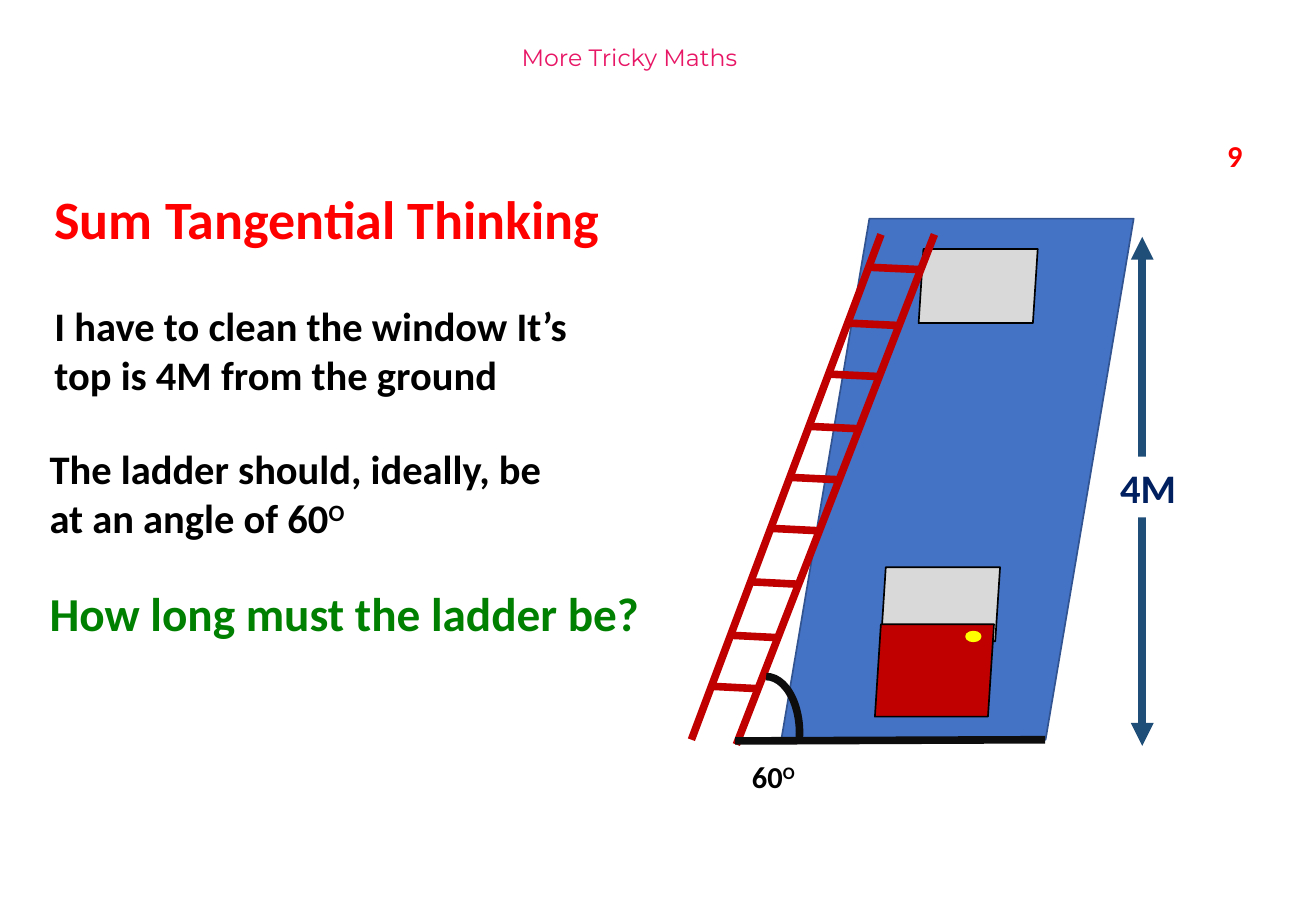
import pptx
import pptx.util
import pptx.dml.color
import pptx.enum.shapes
import pptx.enum.text
import pptx.oxml.ns
import lxml.etree

Inches = pptx.util.Inches
Forms = pptx.enum.shapes.MSO_SHAPE
RED = "C00000"
INK = "0D0D0D"


def paint(color, code):
    color.rgb = pptx.dml.color.RGBColor.from_string(code)


def put(slide, form, box, fill=None, edge=None, weight=1):
    shape = slide.shapes.add_shape(form, *map(Inches, box))
    shape.shadow.inherit = False
    if fill:
        shape.fill.solid()
        paint(shape.fill.fore_color, fill)
    else:
        shape.fill.background()
    if edge:
        paint(shape.line.color, edge)
        shape.line.width = pptx.util.Pt(weight)
    else:
        shape.line.fill.background()
    return shape


def draw(slide, start, end, code, heads=False):
    line = slide.shapes.add_connector(
        pptx.enum.shapes.MSO_CONNECTOR.STRAIGHT, *map(Inches, start + end))
    paint(line.line.color, code)
    line.line.width = pptx.util.Pt(4.5)
    qn = pptx.oxml.ns.qn
    lxml.etree.SubElement(line._element.spPr, qn("a:effectLst"))
    if heads:
        stroke = line._element.spPr.find(qn("a:ln"))
        for end_tag in ("a:headEnd", "a:tailEnd"):
            lxml.etree.SubElement(stroke, qn(end_tag), type="triangle")


def style(run, size, code, face, bold):
    run.font.size = pptx.util.Pt(size)
    run.font.name = face
    run.font.bold = bold
    paint(run.font.color, code)


def fill_text(shape, text, size, code, wrap=True, power="",
              face="Calibri", bold=True, align="LEFT"):
    frame = shape.text_frame
    frame.text = text
    frame.word_wrap = wrap
    frame.auto_size = pptx.enum.text.MSO_AUTO_SIZE.SHAPE_TO_FIT_TEXT
    frame.vertical_anchor = pptx.enum.text.MSO_ANCHOR.TOP
    para = frame.paragraphs[0]
    para.alignment = pptx.enum.text.PP_ALIGN[align]
    if power:
        raised = para.add_run()
        raised.text = power
        raised._r.get_or_add_rPr().set("baseline", "30000")
    for run in para.runs:
        style(run, size, code, face, bold)


def write(slide, box, *args, **looks):
    fill_text(slide.shapes.add_textbox(*map(Inches, box)), *args, **looks)


def header(slide, x, y, w):
    write(slide, (x, y, 2.44, 0.58), "More Tricky Maths", 14, "E81766",
          wrap=False, face="Montserrat", bold=False, align="CENTER")
    write(slide, (x + w, y + 0.78, 0.33, 0.4), "9", 18, "FF0000")


def problem(slide, x, y):
    write(slide, (x + 0.04, y, 4.73, 0.64), "Sum Tangential Thinking",
          32, "FF0000", wrap=False)
    write(slide, (x + 0.04, y + 0.95, 4.79, 0.91),
          "I have to clean the window It’s top is 4M from the ground",
          24, "000000")
    write(slide, (x, y + 2.13, 4.3, 0.91),
          "The ladder should, ideally, be at an angle of 60",
          24, "000000", power="O")
    write(slide, (x, y + 3.28, 5.06, 0.57), "How long must the ladder be?",
          28, "008000")


def house(slide, x, y, w, h):
    put(slide, Forms.PARALLELOGRAM, (x, y, w, h), "4472C4", "325491")
    parts = [(1.13, 0.25, 0.61, "D9D9D9"),
             (0.82, 2.87, 0.61, "D9D9D9"),
             (0.77, 3.34, 0.76, RED)]
    for across, down, tall, code in parts:
        panel = put(slide, Forms.PARALLELOGRAM,
                    (x + across, y + down, 0.98, tall), code, "000000")
        panel.adjustments[0] = 0.065
    put(slide, Forms.OVAL, (x + 1.52, y + 3.4, 0.12, 0.08), "FFFF00", "FFFF00")


def ladder(slide, x, y, w, h):
    foot = x + 0.37
    tip = x + w - 0.44
    draw(slide, (tip, y), (x, y + h - 0.04), RED)
    draw(slide, (x + w, y), (foot, y + h), RED)
    for drop in (0.27, 0.73, 1.15, 1.58, 2, 2.42, 2.86, 3.3, 3.72):
        left = tip - (tip - x) * drop / (h - 0.04)
        right = x + w - (x + w - foot) * (drop + 0.02) / h
        draw(slide, (left, y + drop), (right, y + drop + 0.02), RED)


def measure(slide, x, y, h):
    draw(slide, (x, y), (x, y + h), "1F4E79", heads=True)
    label = put(slide, Forms.RECTANGLE, (x - 0.28, y + 1.81, 0.67, 0.5), "FFFFFF")
    fill_text(label, "4M", 24, "002060", wrap=False)


def angle(slide, x, y, w):
    arc = put(slide, Forms.ARC, (x - 0.02, y - 0.53, 0.55, 0.93),
              edge=INK, weight=4.5)
    arc.adjustments[0] = 162
    arc.adjustments[1] = 5.461
    draw(slide, (x + w, y - 0.01), (x, y), INK)
    write(slide, (x + 0.04, y + 0.09, 0.57, 0.4), "60", 18, "000000",
          wrap=False, power="O")


def main():
    deck = pptx.Presentation()
    deck.slide_width = Inches(10.83)
    deck.slide_height = Inches(7.5)
    slide = deck.slides.add_slide(deck.slide_layouts[6])
    header(slide, 3.96, 0.3, 6.04)
    problem(slide, 0.31, 1.48)
    house(slide, 6.43, 1.8, 2.9, 4.29)
    ladder(slide, 5.69, 1.93, 2, 4.2)
    measure(slide, 9.4, 1.95, 4.19)
    angle(slide, 6.05, 6.1, 2.55)
    deck.save("out.pptx")


if __name__ == "__main__":
    main()
